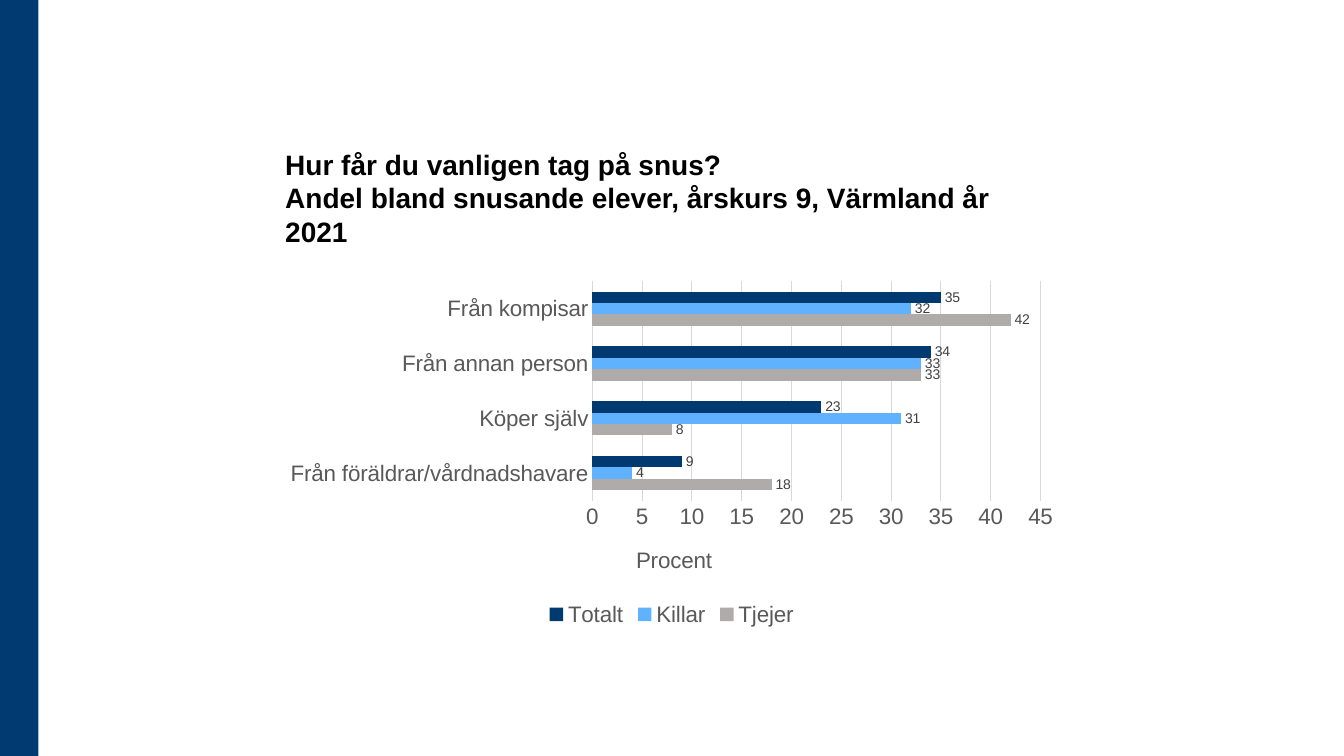
from dataclasses import dataclass

from lxml.etree import SubElement
from pptx import Presentation
from pptx.chart.data import CategoryChartData
from pptx.dml.color import RGBColor
from pptx.enum.chart import XL_CHART_TYPE, XL_LABEL_POSITION, XL_LEGEND_POSITION, XL_TICK_MARK
from pptx.enum.shapes import MSO_SHAPE
from pptx.enum.text import MSO_ANCHOR, MSO_AUTO_SIZE, PP_ALIGN
from pptx.oxml.ns import qn
from pptx.util import Pt

NAVY = RGBColor(0x00, 0x3A, 0x70)
SKY = RGBColor(0x60, 0xB2, 0xFF)
GREY = RGBColor(0xAF, 0xAB, 0xAB)
GRID = RGBColor(0xD9, 0xD9, 0xD9)
AXIS_TEXT = RGBColor(0x59, 0x59, 0x59)
LABEL_TEXT = RGBColor(0x40, 0x40, 0x40)
BLACK = RGBColor(0, 0, 0)

SLIDE_W, SLIDE_H = Pt(960), Pt(540)
LEFT, WIDTH = Pt(196.5), Pt(566.6)

CATEGORIES = ["Från föräldrar/vårdnadshavare", "Köper själv",
              "Från annan person", "Från kompisar"]


@dataclass
class BarSeries:
    name: str
    values: tuple[int, ...]
    color: RGBColor


SERIES = [
    BarSeries("Tjejer", (18, 8, 33, 42), GREY),
    BarSeries("Killar", (4, 31, 33, 32), SKY),
    BarSeries("Totalt", (9, 23, 34, 35), NAVY),
]


def set_attrs(obj, **values) -> None:
    for name, value in values.items():
        setattr(obj, name, value)


def set_font(font, size: float, color: RGBColor, bold: bool = False) -> None:
    set_attrs(font, name="Arial", size=Pt(size), bold=bold)
    font.color.rgb = color


def set_line(line, color: RGBColor) -> None:
    line.color.rgb = color
    line.width = Pt(0.75)


def set_layout(element, **fractions) -> None:
    """Place a chart part by fractions of the chart size."""
    layout = element.find(qn("c:layout"))
    if layout is None:
        layout = element.makeelement(qn("c:layout"), {})
        tx = element.find(qn("c:tx"))
        if tx is None:
            element.insert(0, layout)
        else:
            tx.addnext(layout)
    for child in list(layout):
        layout.remove(child)
    manual = SubElement(layout, qn("c:manualLayout"))
    if "w" in fractions:
        SubElement(manual, qn("c:layoutTarget"), val="inner")
    for side in ("x", "y"):
        SubElement(manual, qn(f"c:{side}Mode"), val="edge")
    for side, value in fractions.items():
        SubElement(manual, qn(f"c:{side}"), val=str(value))


def add_side_band(slide) -> None:
    sp = slide.shapes.add_shape(MSO_SHAPE.RECTANGLE, 0, 0, Pt(27.4), SLIDE_H)
    sp.shadow.inherit = False
    sp.fill.solid()
    sp.fill.fore_color.rgb = NAVY
    sp.line.fill.background()


def format_title(title) -> None:
    set_attrs(title, left=LEFT, top=Pt(76.3), width=WIDTH, height=Pt(104.4))
    tf = title.text_frame
    set_attrs(tf, word_wrap=True, auto_size=MSO_AUTO_SIZE.NONE,
              vertical_anchor=MSO_ANCHOR.BOTTOM)
    tf.text = ("Hur får du vanligen tag på snus?\v"
               "Andel bland snusande elever, årskurs 9, Värmland år 2021")
    p = tf.paragraphs[0]
    set_attrs(p, alignment=PP_ALIGN.LEFT, line_spacing=Pt(24))
    for r in p.runs:
        set_font(r.font, 20, BLACK, bold=True)


def format_axes(chart) -> None:
    cat, val = chart.category_axis, chart.value_axis
    for axis in (cat, val):
        set_attrs(axis, major_tick_mark=XL_TICK_MARK.NONE,
                  minor_tick_mark=XL_TICK_MARK.NONE)
        set_font(axis.tick_labels.font, 16, AXIS_TEXT)
    cat.has_major_gridlines = False
    set_line(cat.format.line, GRID)

    set_attrs(val, minimum_scale=0, maximum_scale=45, major_unit=5,
              has_major_gridlines=True, has_title=True)
    set_line(val.major_gridlines.format.line, GRID)
    val.format.line.fill.background()
    set_attrs(val.tick_labels, number_format="0", number_format_is_linked=False)
    p = val.axis_title.text_frame.paragraphs[0]
    r = p.add_run()
    r.text = "Procent"
    set_font(r.font, 16, AXIS_TEXT)
    set_layout(val.axis_title._element, x=0.45, y=0.75)


def add_bar_chart(slide) -> None:
    data = CategoryChartData(number_format="0")
    data.categories = CATEGORIES
    for s in SERIES:
        data.add_series(s.name, s.values)
    chart = slide.shapes.add_chart(XL_CHART_TYPE.BAR_CLUSTERED, LEFT, Pt(195.8),
                                   WIDTH, Pt(254.9), data).chart
    set_attrs(chart, has_title=False, has_legend=True)
    set_font(chart.font, 16, BLACK)
    set_attrs(chart.legend, position=XL_LEGEND_POSITION.BOTTOM, include_in_layout=False)
    set_font(chart.legend.font, 16, AXIS_TEXT)
    format_axes(chart)

    plot = chart.plots[0]
    set_attrs(plot, gap_width=182, vary_by_categories=False)
    for s, bars in zip(SERIES, plot.series):
        bars.format.fill.solid()
        bars.format.fill.fore_color.rgb = s.color
        labels = bars.data_labels
        set_attrs(labels, show_value=True, position=XL_LABEL_POSITION.OUTSIDE_END,
                  number_format="0", number_format_is_linked=False)
        set_font(labels.font, 10, LABEL_TEXT)
    plot_area = chart._chartSpace.chart.plotArea
    set_layout(plot_area, x=0.4, y=0.02, w=0.565, h=0.615)


def main() -> None:
    prs = Presentation()
    set_attrs(prs, slide_width=SLIDE_W, slide_height=SLIDE_H)
    slide = prs.slides.add_slide(prs.slide_layouts.get_by_name("Title Only"))
    add_side_band(slide)
    format_title(slide.shapes.title)
    add_bar_chart(slide)
    prs.save("out.pptx")


if __name__ == "__main__":
    main()
